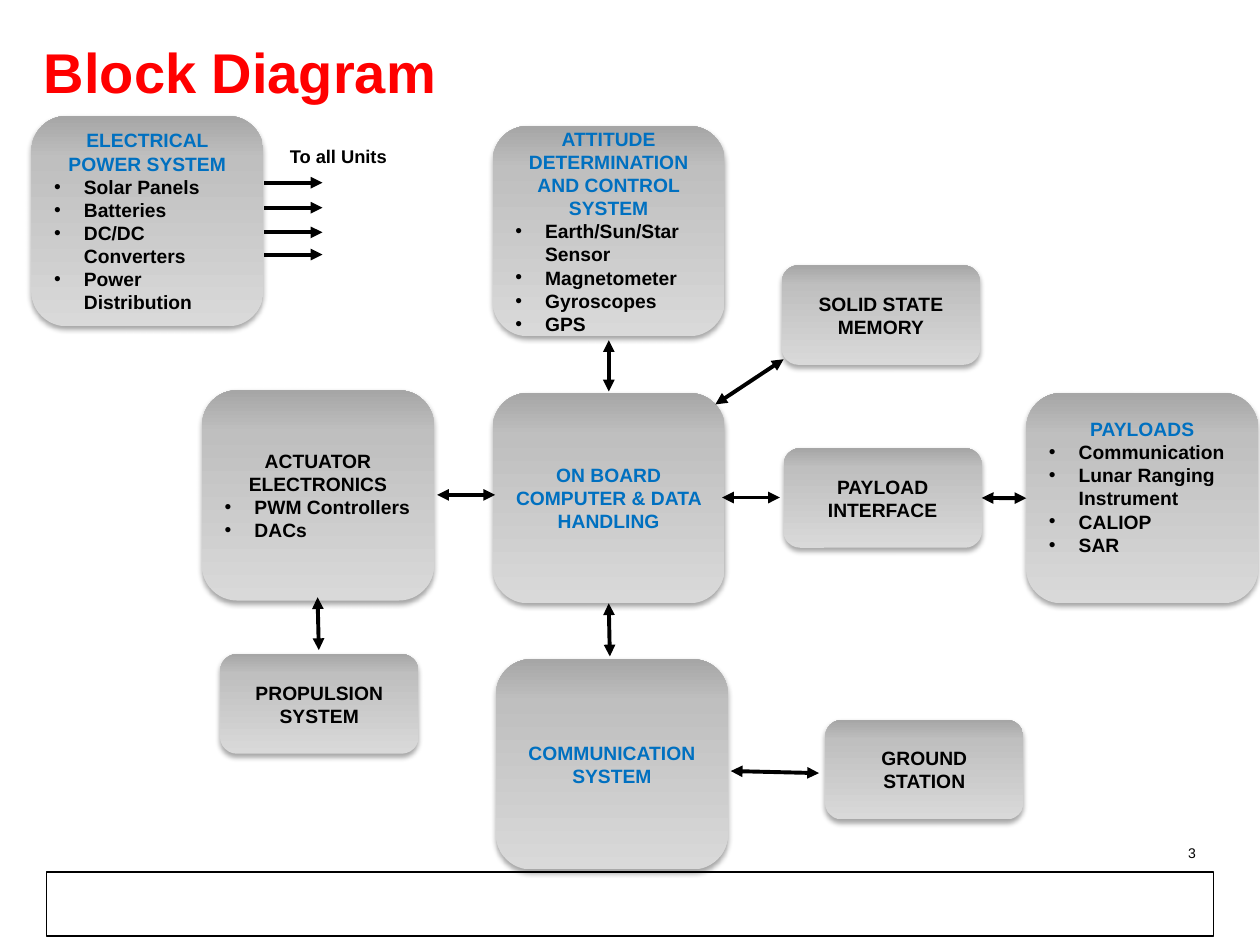
from copy import deepcopy
from dataclasses import dataclass

from lxml.etree import SubElement
from pptx import Presentation
from pptx.dml.color import RGBColor
from pptx.enum.shapes import MSO_CONNECTOR, MSO_SHAPE
from pptx.enum.text import MSO_ANCHOR, PP_ALIGN
from pptx.oxml.ns import qn
from pptx.util import Pt


@dataclass(frozen=True)
class Theme:
    font: str = "Arial"
    ink: str = "000000"
    title: str = "FF0000"
    accent: str = "0070C0"
    gradient: tuple = ((0, "D9D9D9"), (0.8, "BFBFBF"), (1, "A6A6A6"))
    title_size: float = 32
    block_size: float = 11
    label_size: float = 10.5
    number_size: float = 8
    arrow_width: float = 2.25
    bullet_indent: float = 17


LARGE = (132.5, 120.2)
SMALL = (113.2, 56.9)


def write(paragraph, text, *, font, size, color, bold=True,
          align=PP_ALIGN.LEFT, indent=0, spacing=None):
    if indent:
        properties = paragraph._p.get_or_add_pPr()
        properties.set("marL", str(Pt(indent)))
        properties.set("indent", str(-Pt(indent)))
        SubElement(properties, qn("a:buFont"), typeface=font)
        SubElement(properties, qn("a:buChar"), char="•")
    paragraph.alignment = align
    if spacing:
        paragraph.line_spacing = spacing
    run = paragraph.add_run()
    run.text = text
    run.font.name = font
    run.font.size = Pt(size)
    run.font.bold = bold
    run.font.color.rgb = RGBColor.from_string(color)


class Diagram:
    def __init__(self, slide, theme):
        self.shapes = slide.shapes
        self.theme = theme

    def text(self, content, left, top, width, height, *, wrap=True,
             anchor=MSO_ANCHOR.TOP, **style):
        box = self.shapes.add_textbox(Pt(left), Pt(top), Pt(width), Pt(height))
        frame = box.text_frame
        frame.word_wrap = wrap
        frame.vertical_anchor = anchor
        write(frame.paragraphs[0], content, font=self.theme.font, **style)

    def frame(self, left, top, width, height):
        border = self.shapes.add_shape(
            MSO_SHAPE.RECTANGLE, Pt(left), Pt(top), Pt(width), Pt(height))
        border.shadow.inherit = False
        border.fill.background()
        border.line.color.rgb = RGBColor.from_string(self.theme.ink)
        border.line.width = Pt(0.75)

    def paint(self, block):
        block.line.fill.background()
        block.fill.gradient()
        block.fill.gradient_angle = 90
        stop_list = block._element.spPr.find(".//" + qn("a:gsLst"))
        stop_list.insert(1, deepcopy(stop_list[0]))
        for stop, (position, color) in zip(block.fill.gradient_stops, self.theme.gradient):
            stop.position = position
            stop.color.rgb = RGBColor.from_string(color)
        block.shadow.inherit = False
        effects = block._element.spPr.find(qn("a:effectLst"))
        shadow = SubElement(effects, qn("a:outerShdw"), blurRad=str(Pt(3.1)),
                            dist=str(Pt(1.8)), dir="5400000", rotWithShape="0")
        shade = SubElement(shadow, qn("a:srgbClr"), val=self.theme.ink)
        SubElement(shade, qn("a:alpha"), val="35000")

    def block(self, heading, left, top, size, items=(), color=None, lift=0):
        theme = self.theme
        block = self.shapes.add_shape(
            MSO_SHAPE.ROUNDED_RECTANGLE, Pt(left), Pt(top), *map(Pt, size))
        self.paint(block)
        frame = block.text_frame
        frame.word_wrap = True
        frame.vertical_anchor = MSO_ANCHOR.MIDDLE
        frame.margin_bottom = Pt(3.6 + lift)
        write(frame.paragraphs[0], heading, font=theme.font, size=theme.block_size,
              color=color or theme.ink, align=PP_ALIGN.CENTER)
        for item in items:
            write(frame.add_paragraph(), item, font=theme.font, size=theme.block_size,
                  color=theme.ink, indent=theme.bullet_indent)
        return block

    def arrow(self, start, end, both=True):
        arrow = self.shapes.add_connector(
            MSO_CONNECTOR.STRAIGHT, *map(Pt, start + end))
        arrow.line.color.rgb = RGBColor.from_string(self.theme.ink)
        arrow.line.width = Pt(self.theme.arrow_width)
        outline = arrow.line._get_or_add_ln()
        if both:
            SubElement(outline, qn("a:headEnd"), type="triangle")
        SubElement(outline, qn("a:tailEnd"), type="triangle")
        SubElement(arrow._element.spPr, qn("a:effectLst"))
        return arrow


def main():
    presentation = Presentation()
    presentation.slide_width, presentation.slide_height = Pt(720), Pt(540)
    slide = presentation.slides.add_slide(presentation.slide_layouts[6])
    theme = Theme()
    diagram = Diagram(slide, theme)

    diagram.frame(26.6, 498.3, 666.7, 36.6)
    diagram.text("Block Diagram", 18, 11.5, 666, 64, anchor=MSO_ANCHOR.MIDDLE,
                 size=theme.title_size, color=theme.title, spacing=0.85)
    diagram.text("3", 522.7, 478.8, 167.8, 16.6, size=theme.number_size,
                 color=theme.ink, bold=False, align=PP_ALIGN.RIGHT)

    computer = diagram.block("ON BOARD COMPUTER & DATA HANDLING", 281.6, 224.6, LARGE,
                             color=theme.accent)
    diagram.block("ATTITUDE DETERMINATION AND CONTROL SYSTEM", 281.6, 72, LARGE,
                  ("Earth/Sun/Star Sensor", "Magnetometer", "Gyroscopes", "GPS"),
                  theme.accent)
    diagram.block("ELECTRICAL POWER SYSTEM", 18, 66.3, LARGE,
                  ("Solar Panels", "Batteries", "DC/DC Converters", "Power Distribution"),
                  theme.accent)
    diagram.block("ACTUATOR ELECTRONICS", 115.5, 223, LARGE, ("PWM Controllers", "DACs"))
    payloads = diagram.block(
        "PAYLOADS", 586.5, 224.6, LARGE,
        ("Communication", "Lunar Ranging Instrument", "CALIOP", "SAR"),
        theme.accent, lift=13)
    diagram.block("COMMUNICATION SYSTEM", 283.5, 376.7, LARGE, color=theme.accent)
    interface = diagram.block("PAYLOAD INTERFACE", 447.8, 256.1, SMALL)
    diagram.block("PROPULSION SYSTEM", 125.9, 373.8, SMALL)
    diagram.block("GROUND STATION", 471.6, 411.4, SMALL)
    diagram.block("SOLID STATE MEMORY", 446.8, 151.6, SMALL)

    diagram.text("To all Units", 157.7, 79.2, 71.3, 20, wrap=False,
                 size=theme.label_size, color=theme.ink, align=PP_ALIGN.CENTER)
    for height in (104.4, 118.7, 132.8, 145.5):
        diagram.arrow((151, height), (184.3, height), both=False)

    for start, end in (
        ((417.6, 440.6), (468, 441.8)),
        ((412.6, 284.3), (445.7, 284.3)),
        ((347.9, 194.4), (347.9, 223.7)),
        ((249.8, 282.8), (282.9, 282.8)),
        ((181.5, 341.3), (182.2, 371.5)),
        ((447.8, 205.3), (408.8, 231.1)),
    ):
        diagram.arrow(start, end)
    diagram.arrow((347.9, 344.8), (348.5, 375.1)).begin_connect(computer, 2)
    payload_link = diagram.arrow((561, 284.5), (586.5, 284.7))
    payload_link.begin_connect(interface, 3)
    payload_link.end_connect(payloads, 1)

    presentation.save("out.pptx")


if __name__ == "__main__":
    main()
